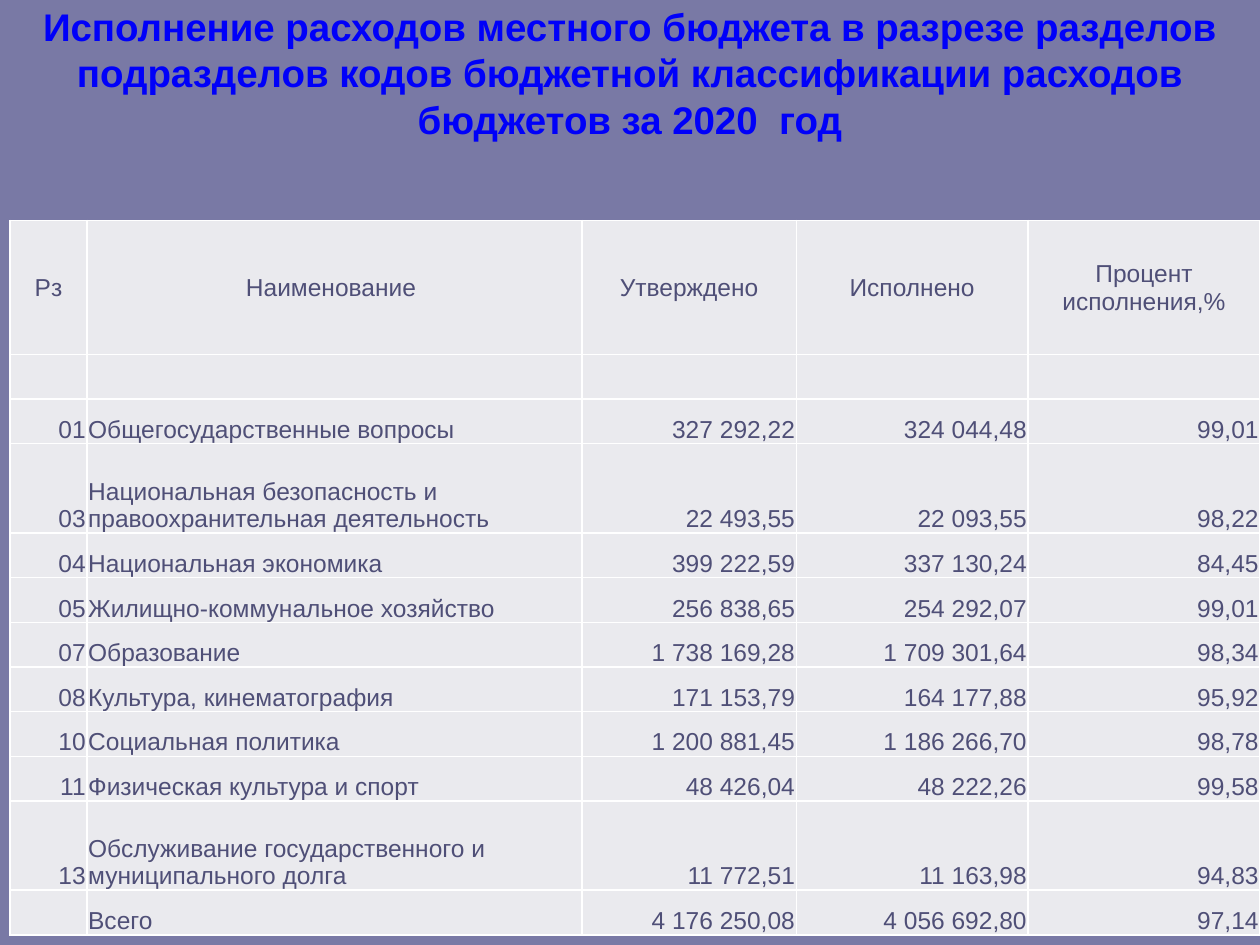
"""Builds a slide with a table of local budget spending for 2020."""
from lxml import etree
from pptx import Presentation
from pptx.dml.color import RGBColor
from pptx.enum.text import MSO_ANCHOR, MSO_AUTO_SIZE, PP_ALIGN
from pptx.oxml.ns import qn
from pptx.util import Inches, Pt

LEFT, CENTER, RIGHT = PP_ALIGN.LEFT, PP_ALIGN.CENTER, PP_ALIGN.RIGHT
MIDDLE, BOTTOM = MSO_ANCHOR.MIDDLE, MSO_ANCHOR.BOTTOM
NO_FIT = MSO_AUTO_SIZE.NONE
TITLE_ONLY = 5

COLORS = {"back": "7979A5", "title": "0000F9", "text": "4F4F77",
          "cell": "EAEAEE", "border": "FFFFFF"}

TITLE = ("Исполнение расходов местного бюджета в разрезе разделов подразделов "
         "кодов бюджетной классификации расходов бюджетов за 2020  год")
ROWS = [
    ("Рз", "Наименование ", "Утверждено", "Исполнено", "Процент исполнения,%"),
    ("", "", "", "", ""),
    ("01", "Общегосударственные вопросы", "327 292,22", "324 044,48", "99,01"),
    ("03", "Национальная безопасность и правоохранительная деятельность",
     "22 493,55", "22 093,55", "98,22"),
    ("04", "Национальная экономика", "399 222,59", "337 130,24", "84,45"),
    ("05", "Жилищно-коммунальное хозяйство", "256 838,65", "254 292,07", "99,01"),
    ("07", "Образование", "1 738 169,28", "1 709 301,64", "98,34"),
    ("08", "Культура, кинематография", "171 153,79", "164 177,88", "95,92"),
    ("10", "Социальная политика", "1 200 881,45", "1 186 266,70", "98,78"),
    ("11", "Физическая культура и спорт", "48 426,04", "48 222,26", "99,58"),
    ("13", "Обслуживание государственного и муниципального долга",
     "11 772,51", "11 163,98", "94,83"),
    ("", "Всего", "4 176 250,08", "4 056 692,80", "97,14"),
]
COL_WIDTHS = [0.61, 3.93, 1.7, 1.84, 1.84]
ROW_UNITS = [3, 1, 1, 2, 1, 1, 1, 1, 1, 1, 2, 1]
TABLE_TOP, TABLE_HEIGHT = 1.75, 5.67


class SlideBuilder:
    """Holds the style and the current slide."""

    font = "Arial"

    def __init__(self, prs):
        self.s = prs.slides.add_slide(prs.slide_layouts[TITLE_ONLY])
        fill = self.s.background.fill
        fill.solid()
        fill.fore_color.rgb = self.color("back")

    def color(self, name):
        return RGBColor.from_string(COLORS[name])

    def set_text(self, tf, text, size, color, align, bold=False):
        tf.text = text
        p = tf.paragraphs[0]
        p.alignment = align
        for r in p.runs:
            r.font.name = self.font
            r.font.size = Pt(size)
            r.font.bold = bold
            r.font.color.rgb = self.color(color)

    def title(self, text, left, top, width, height):
        sp = self.s.shapes.title
        sp.left, sp.top = Inches(left), Inches(top)
        sp.width, sp.height = Inches(width), Inches(height)
        tf = sp.text_frame
        tf.word_wrap = True
        tf.auto_size = NO_FIT
        tf.vertical_anchor = MIDDLE
        self.set_text(tf, text, 22, "title", CENTER, bold=True)

    def cell(self, cell, text, align, anchor):
        cell.margin_left = cell.margin_right = cell.margin_top = Inches(0.01)
        cell.margin_bottom = 0
        cell.vertical_anchor = anchor
        self.set_text(cell.text_frame, text, 14, "text", align)
        self.borders(cell)
        cell.fill.solid()
        cell.fill.fore_color.rgb = self.color("cell")

    def borders(self, cell):
        tc_pr = cell._tc.get_or_add_tcPr()
        for side in ("a:lnL", "a:lnR", "a:lnT", "a:lnB"):
            ln = etree.SubElement(tc_pr, qn(side), w=str(Pt(1)))
            fill = etree.SubElement(ln, qn("a:solidFill"))
            etree.SubElement(fill, qn("a:srgbClr"), val=COLORS["border"])

    def table(self, rows, left, top, col_widths, row_heights):
        frame = self.s.shapes.add_table(
            len(rows), len(col_widths), Inches(left), Inches(top),
            Inches(sum(col_widths)), Inches(sum(row_heights)))
        table = frame.table
        table.first_row = table.horz_banding = False
        for column, width in zip(table.columns, col_widths):
            column.width = Inches(width)
        for i, (row, height) in enumerate(zip(rows, row_heights)):
            table.rows[i].height = Inches(height)
            for j, text in enumerate(row):
                if i == 0:
                    align, anchor = CENTER, MIDDLE
                else:
                    align, anchor = LEFT if j == 1 else RIGHT, BOTTOM
                self.cell(table.cell(i, j), text, align, anchor)


def main():
    prs = Presentation()
    prs.slide_width, prs.slide_height = Inches(10), Inches(7.5)
    slide = SlideBuilder(prs)
    slide.title(TITLE, 0, 0, 10, 1.15)
    unit = TABLE_HEIGHT / sum(ROW_UNITS)
    slide.table(ROWS, 0.08, TABLE_TOP, COL_WIDTHS, [n * unit for n in ROW_UNITS])
    prs.save("out.pptx")


if __name__ == "__main__":
    main()
